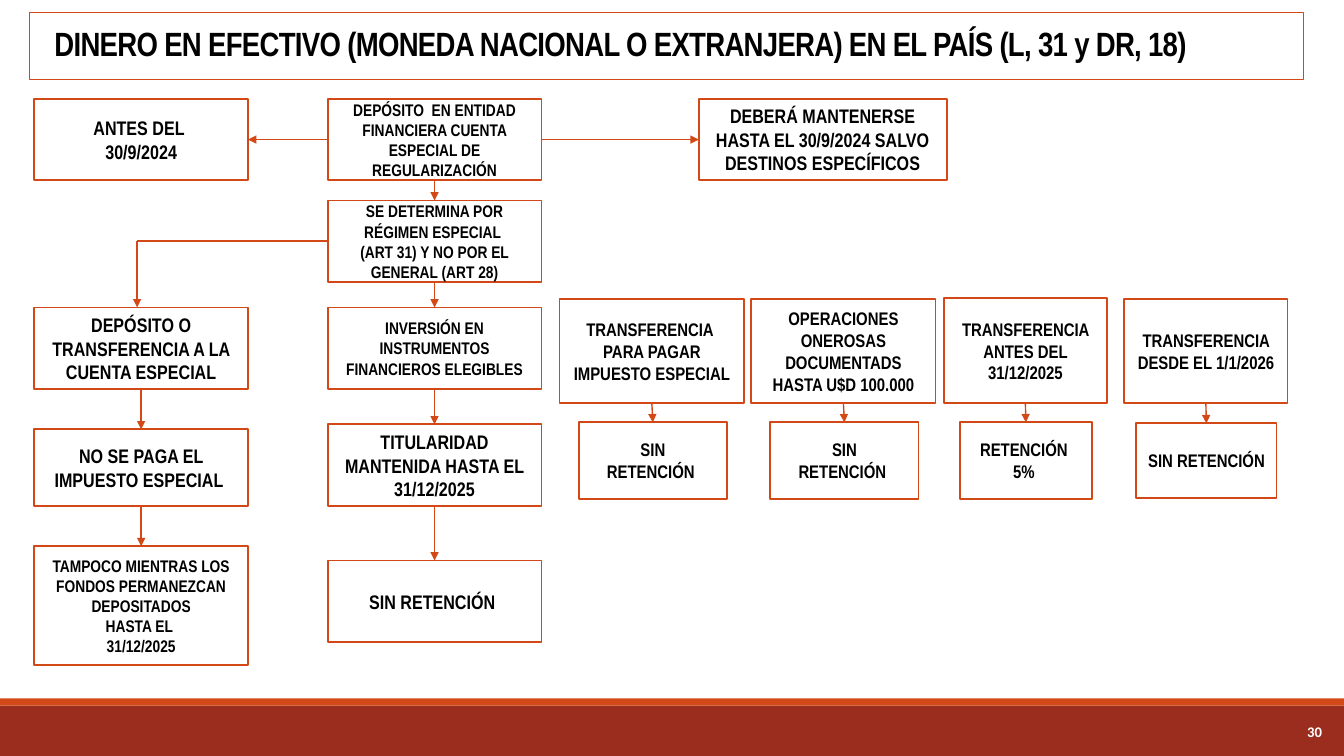
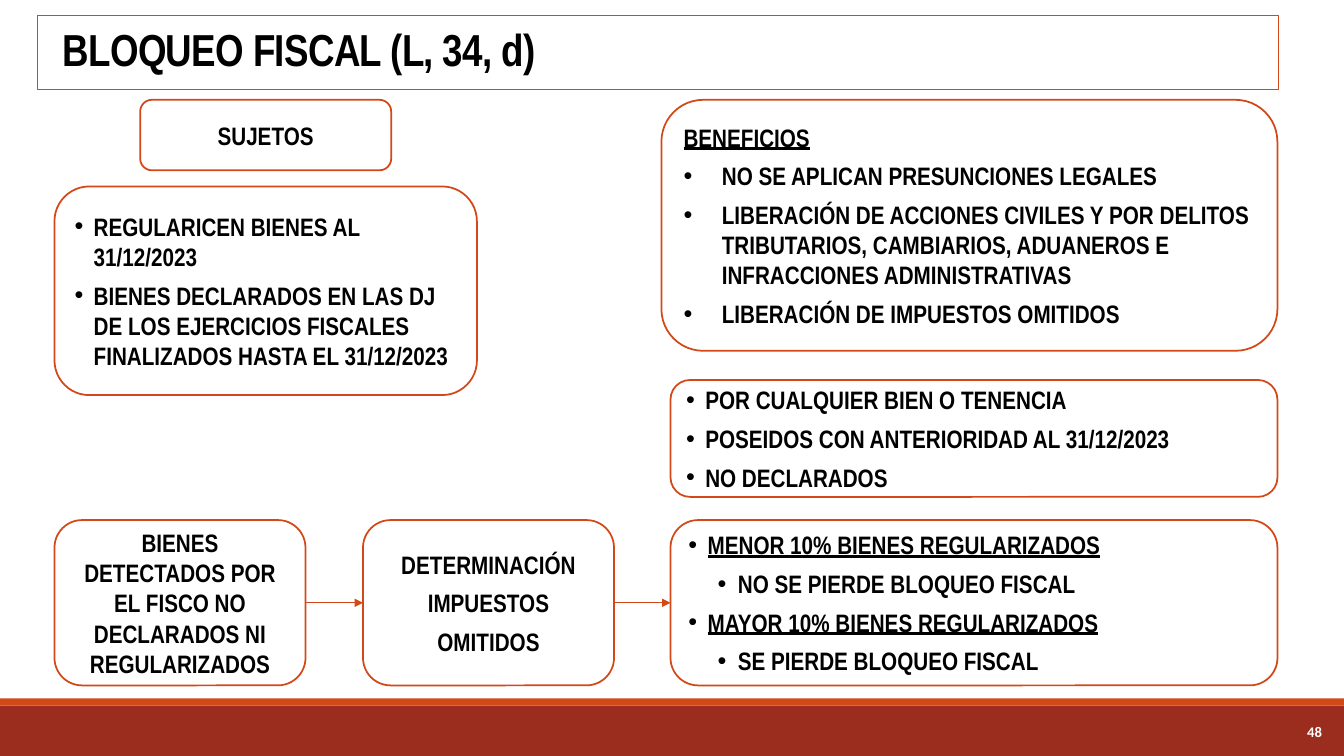
from dataclasses import dataclass

from pptx import Presentation
from pptx.dml.color import RGBColor
from pptx.enum.shapes import MSO_CONNECTOR as Conn, MSO_SHAPE as Shape
from pptx.enum.text import MSO_ANCHOR as Anchor, PP_ALIGN as Align
from pptx.oxml.ns import qn
from pptx.util import Inches, Pt
from lxml.etree import SubElement as Sub


@dataclass(frozen=True)
class Theme:
    """Hold the colours, fonts and sizes that the slides share."""
    accent: str = "D34817"
    band: str = "9B2D1F"
    white: str = "FFFFFF"
    ink: str = "000000"
    font: str = "Arial Narrow"
    num_font: str = "Calibri"
    num: float = 10.5
    small: float = 12
    mid: float = 13
    large: float = 14
    body: float = 18
    title: float = 24
    title_big: float = 32
    edge: float = 1.25
    thin: float = 0.25
    arrow: float = 1


T = Theme()
TOP, LEFT, BOTTOM, RIGHT = range(4)
DOT = (0.19, 0.19)
WIDE = (0.38, 0.38)
SUB = (0.49, 0.2)


def rgb(code):
    """Turn a hex code into a colour."""
    return RGBColor.from_string(code)


def write(frame, text, size=T.body, font=T.font, color=T.ink, align=Align.LEFT,
          under=False, after=0, bullet=None, lead=None, track=None):
    """Add one bold paragraph to a frame."""
    para = frame.paragraphs[0]
    if para.runs:
        para = frame.add_paragraph()
    para.alignment = align
    para.space_after = Pt(after)
    if lead:
        para.line_spacing = lead
    if bullet:
        left, hang = bullet
        props = para._p.get_or_add_pPr()
        props.set("marL", str(Inches(left)))
        props.set("indent", str(-Inches(hang)))
        Sub(props, qn("a:buFont")).set("typeface", "Arial")
        Sub(props, qn("a:buChar")).set("char", "•")
    run = para.add_run()
    run.text = text
    run.font.size = Pt(size)
    run.font.name = font
    run.font.bold = True
    run.font.underline = under
    run.font.color.rgb = rgb(color)
    if track:
        run._r.get_or_add_rPr().set("spc", str(int(track * 100)))


def block(slide, at, kind=Shape.RECTANGLE, fill=T.white, line=T.edge):
    """Add a shape with a wrapped, centred frame."""
    shape = slide.shapes.add_shape(kind, *map(Inches, at))
    shape.shadow.inherit = False
    if fill:
        shape.fill.solid()
        shape.fill.fore_color.rgb = rgb(fill)
    else:
        shape.fill.background()
    if line:
        shape.line.color.rgb = rgb(T.accent)
        shape.line.width = Pt(line)
    else:
        shape.line.fill.background()
    shape.text_frame.word_wrap = True
    shape.text_frame.vertical_anchor = Anchor.MIDDLE
    return shape


def box(slide, at, text, size=T.large):
    """Add a square box with centred lines."""
    shape = block(slide, at)
    for part in text.split("\n"):
        write(shape.text_frame, part, size=size, align=Align.CENTER)
    return shape


def card(slide, at, *items, **base):
    """Add a round box from pairs of text and format."""
    shape = block(slide, at, Shape.ROUNDED_RECTANGLE)
    for text, form in items:
        write(shape.text_frame, text, after=6, **base, **form)
    return shape


def line(slide, start, end, head=True):
    """Draw a straight line, with an arrowhead if wanted."""
    link = slide.shapes.add_connector(Conn.STRAIGHT, *map(Inches, start + end))
    link.line.color.rgb = rgb(T.accent)
    link.line.width = Pt(T.arrow)
    if head:
        Sub(link.line._get_or_add_ln(), qn("a:tailEnd")).set("type", "triangle")
    Sub(link._element.spPr, qn("a:effectLst"))
    return link


def join(slide, first, last, out=BOTTOM, into=TOP):
    """Join two shapes with an arrow."""
    link = line(slide, (0, 0), (1, 1))
    link.begin_connect(first, out)
    link.end_connect(last, into)


def chain(slide, shapes, **sides):
    """Join each shape to the next one."""
    for first, last in zip(shapes, shapes[1:]):
        join(slide, first, last, **sides)


def start(deck, title, at, size, number):
    """Add a slide with its bands, title and number."""
    slide = deck.slides.add_slide(deck.slide_layouts[6])
    block(slide, (0, 7, 13.33, 0.5), fill=T.band, line=None)
    block(slide, (0, 6.93, 13.33, 0.07), fill=T.accent, line=None)
    frame = block(slide, at, fill=None, line=T.thin).text_frame
    frame.margin_left = frame.margin_right = Inches(0.25)
    frame.margin_top = frame.margin_bottom = Inches(0.25)
    write(frame, title, size=size, lead=0.85, track=-0.5)
    spot = slide.shapes.add_textbox(*map(Inches, (11.78, 7.06, 1.43, 0.4)))
    spot.text_frame.word_wrap = True
    spot.text_frame.vertical_anchor = Anchor.MIDDLE
    write(spot.text_frame, str(number), size=T.num, font=T.num_font,
          color=T.white, align=Align.RIGHT)
    return slide


def cash(deck):
    """Build the slide on cash held in the country."""
    slide = start(deck, "DINERO EN EFECTIVO (MONEDA NACIONAL O EXTRANJERA) "
                  "EN EL PAÍS (L, 31 y DR, 18)",
                  (0.29, 0.12, 12.64, 0.67), T.title, 30)
    wide, high = 2.12, 0.81

    def stack(left, rows):
        """Place a column of boxes."""
        return [box(slide, (left, top, wide, tall), text, size)
                for top, tall, text, size in rows]

    date, *account = stack(0.34, [
        (0.98, high, "ANTES DEL \n30/9/2024", T.large),
        (3.05, high, "DEPÓSITO O TRANSFERENCIA A LA CUENTA ESPECIAL", T.large),
        (4.26, 0.76, "NO SE PAGA EL IMPUESTO ESPECIAL ", T.large),
        (5.42, 1.18, "TAMPOCO MIENTRAS LOS FONDOS PERMANEZCAN DEPOSITADOS\n"
         "HASTA EL \n31/12/2025", T.small),
    ])
    main_col = stack(3.25, [
        (0.98, high, "DEPÓSITO  EN ENTIDAD FINANCIERA CUENTA ESPECIAL DE "
         "REGULARIZACIÓN", T.small),
        (1.99, high, "SE DETERMINA POR RÉGIMEN ESPECIAL \n"
         "(ART 31) Y NO POR EL GENERAL (ART 28)", T.small),
        (3.05, high, "INVERSIÓN EN INSTRUMENTOS FINANCIEROS ELEGIBLES", T.small),
        (4.21, high, "TITULARIDAD MANTENIDA HASTA EL 31/12/2025", T.large),
        (5.56, high, "SIN RETENCIÓN ", T.large),
    ])
    keep = box(slide, (6.93, 0.98, 2.46, high),
               "DEBERÁ MANTENERSE HASTA EL 30/9/2024 SALVO DESTINOS ESPECÍFICOS")
    chain(slide, account)
    chain(slide, main_col)
    join(slide, main_col[0], keep, RIGHT, LEFT)
    join(slide, main_col[0], date, LEFT, RIGHT)
    line(slide, (3.25, 2.39), (1.36, 2.39), head=False)
    line(slide, (1.36, 2.39), (1.36, 3.05))

    none = "SIN\nRETENCIÓN "
    cases = [
        ((5.55, 2.97, 1.83, 1.03),
         "TRANSFERENCIA \nPARA PAGAR IMPUESTO ESPECIAL",
         (5.74, 4.19, 1.47, 0.76), none),
        ((7.45, 2.97, 1.83, 1.03),
         "OPERACIONES ONEROSAS DOCUMENTADS HASTA U$D 100.000",
         (7.64, 4.19, 1.47, 0.76), none),
        ((9.36, 2.96, 1.62, 1.04), "TRANSFERENCIA ANTES DEL 31/12/2025",
         (9.52, 4.19, 1.31, 0.76), "RETENCIÓN \n5% "),
        ((11.15, 2.97, 1.62, 1.03), "TRANSFERENCIA DESDE EL 1/1/2026",
         (11.27, 4.2, 1.39, 0.74), "SIN RETENCIÓN "),
    ]
    for upper, case, lower, result in cases:
        join(slide, box(slide, upper, case, T.mid),
             box(slide, lower, result, T.mid))


def shield(deck):
    """Build the slide on the tax block."""
    slide = start(deck, "BLOQUEO FISCAL (L, 34, d)",
                  (0.37, 0.15, 12.31, 0.74), T.title_big, 48)
    dot, wide, sub = ({"bullet": kind} for kind in (DOT, WIDE, SUB))
    mark = {"under": True}
    card(slide, (1.39, 0.99, 2.49, 0.7), ("SUJETOS", {}), align=Align.CENTER)
    card(slide, (0.54, 1.85, 4.19, 2.07),
         ("REGULARICEN BIENES AL 31/12/2023", dot),
         ("BIENES DECLARADOS EN LAS DJ DE LOS EJERCICIOS FISCALES "
          "FINALIZADOS HASTA EL 31/12/2023", dot))
    card(slide, (6.56, 0.99, 6.11, 2.49),
         ("BENEFICIOS", mark),
         ("NO SE APLICAN PRESUNCIONES LEGALES", wide),
         ("LIBERACIÓN DE ACCIONES CIVILES Y POR DELITOS TRIBUTARIOS, "
          "CAMBIARIOS, ADUANEROS E INFRACCIONES ADMINISTRATIVAS", wide),
         ("LIBERACIÓN DE IMPUESTOS OMITIDOS", wide))
    card(slide, (6.65, 3.77, 6.02, 1.16),
         ("POR CUALQUIER BIEN O TENENCIA", dot),
         ("POSEIDOS CON ANTERIORIDAD AL 31/12/2023", dot),
         ("NO DECLARADOS", dot))
    top, high = 5.16, 1.64
    found = card(slide, (0.54, top, 2.49, high),
                 ("BIENES DETECTADOS POR EL FISCO NO DECLARADOS NI "
                  "REGULARIZADOS", {}), align=Align.CENTER)
    owed = card(slide, (3.6, top, 2.49, high), ("DETERMINACIÓN", {}),
                ("IMPUESTOS", {}), ("OMITIDOS", {}), align=Align.CENTER)
    effect = card(slide, (6.65, top, 6.02, high),
                  ("MENOR 10% BIENES REGULARIZADOS", dot | mark),
                  ("NO SE PIERDE BLOQUEO FISCAL", sub),
                  ("MAYOR 10% BIENES REGULARIZADOS", dot | mark),
                  ("SE PIERDE BLOQUEO FISCAL", sub))
    chain(slide, [found, owed, effect], out=RIGHT, into=LEFT)


def main():
    """Build and save the deck."""
    deck = Presentation()
    deck.slide_width, deck.slide_height = Inches(13.33), Inches(7.5)
    cash(deck)
    shield(deck)
    deck.save("out.pptx")


if __name__ == "__main__":
    main()
